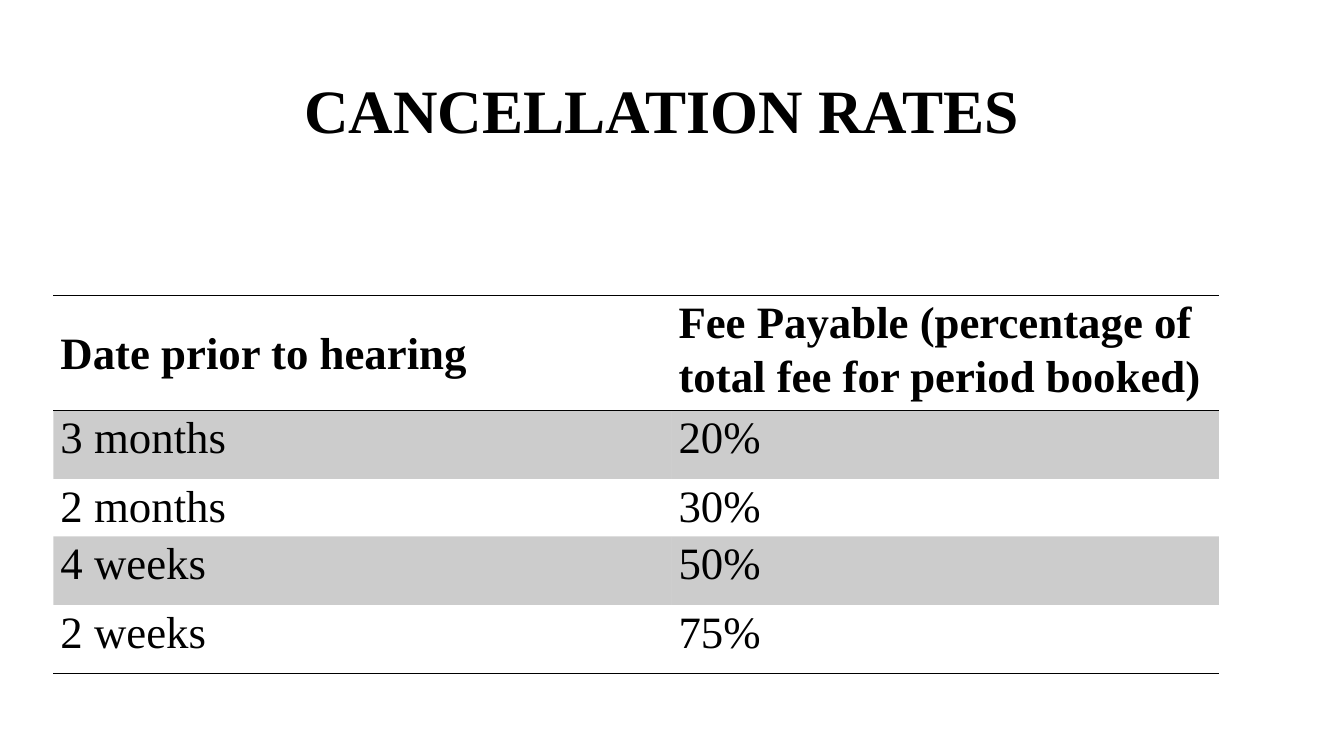
import pptx
import pptx.dml.color
import pptx.enum.text
import pptx.oxml
import pptx.oxml.ns
import pptx.util
from pptx.util import Inches, Pt

FONT = "Times New Roman"
BLACK = "000000"
NO_STYLE = "{2D5ABB26-0587-4C30-8999-92F81FD0307C}"


def style(paragraph, size, bold, spacing, color=BLACK):
    paragraph.line_spacing = spacing
    paragraph.font.name = FONT
    paragraph.font.size = Pt(size)
    paragraph.font.bold = bold
    paragraph.font.color.rgb = pptx.dml.color.RGBColor.from_string(color)


def paint_cell(cell, edges, shaded):
    """Rule the given edges ("T", "B") and shade with 20% black, or leave clear."""
    properties = cell._tc.get_or_add_tcPr()
    namespace = pptx.oxml.ns.nsdecls("a")
    for edge in edges:
        properties.append(pptx.oxml.parse_xml(
            f'<a:ln{edge} {namespace} w="12700"><a:solidFill>'
            f'<a:srgbClr val="{BLACK}"/></a:solidFill></a:ln{edge}>'))
    fill = (f'<a:solidFill {namespace}><a:srgbClr val="{BLACK}">'
            '<a:alpha val="20000"/></a:srgbClr></a:solidFill>'
            if shaded else f'<a:noFill {namespace}/>')
    properties.append(pptx.oxml.parse_xml(fill))


presentation = pptx.Presentation()
presentation.slide_width = Inches(13.33)
presentation.slide_height = Inches(7.5)
slide = presentation.slides.add_slide(presentation.slide_layouts[6])

heading = slide.shapes.add_textbox(
    Inches(0.92), Inches(0.4), Inches(11.5), Inches(1.45)).text_frame
heading.word_wrap = True
heading.margin_left = Inches(2.1)
heading.vertical_anchor = pptx.enum.text.MSO_ANCHOR.MIDDLE
heading.text = "CANCELLATION RATES"
style(heading.paragraphs[0], 44, True, 0.9)

rates = [
    ("Date prior to hearing", "Fee Payable (percentage of total fee for period booked)"),
    ("3 months", "20%"),
    ("2 months", "30%"),
    ("4 weeks", "50%"),
    ("2 weeks", "75%"),
]
column_widths = [6.13, 5.43]
row_heights = [1.05, 0.68, 0.53, 0.68, 0.68]

rate_table = slide.shapes.add_table(
    len(rates), len(column_widths), Inches(0.53), Inches(2.93),
    Inches(sum(column_widths)), Inches(sum(row_heights))).table
rate_table.first_row = False
rate_table.horz_banding = False
rate_table._tbl.tblPr.find(pptx.oxml.ns.qn("a:tableStyleId")).text = NO_STYLE
for column, width in zip(rate_table.columns, column_widths):
    column.width = Inches(width)

for row, (entries, height) in enumerate(zip(rates, row_heights)):
    rate_table.rows[row].height = Inches(height)
    is_header = row == 0
    edges = "TB" if is_header else "B" if row == len(rates) - 1 else ""
    for col, entry in enumerate(entries):
        cell = rate_table.cell(row, col)
        cell.text = entry
        cell.margin_left = cell.margin_right = Inches(0.07)
        cell.margin_top = cell.margin_bottom = 0
        if is_header and col == 0:
            cell.vertical_anchor = pptx.enum.text.MSO_ANCHOR.MIDDLE
        paragraph = cell.text_frame.paragraphs[0]
        style(paragraph, 32, is_header, 1.07)
        paragraph.space_after = Pt(8)
        paint_cell(cell, edges, shaded=row % 2 == 1)

presentation.save("out.pptx")
